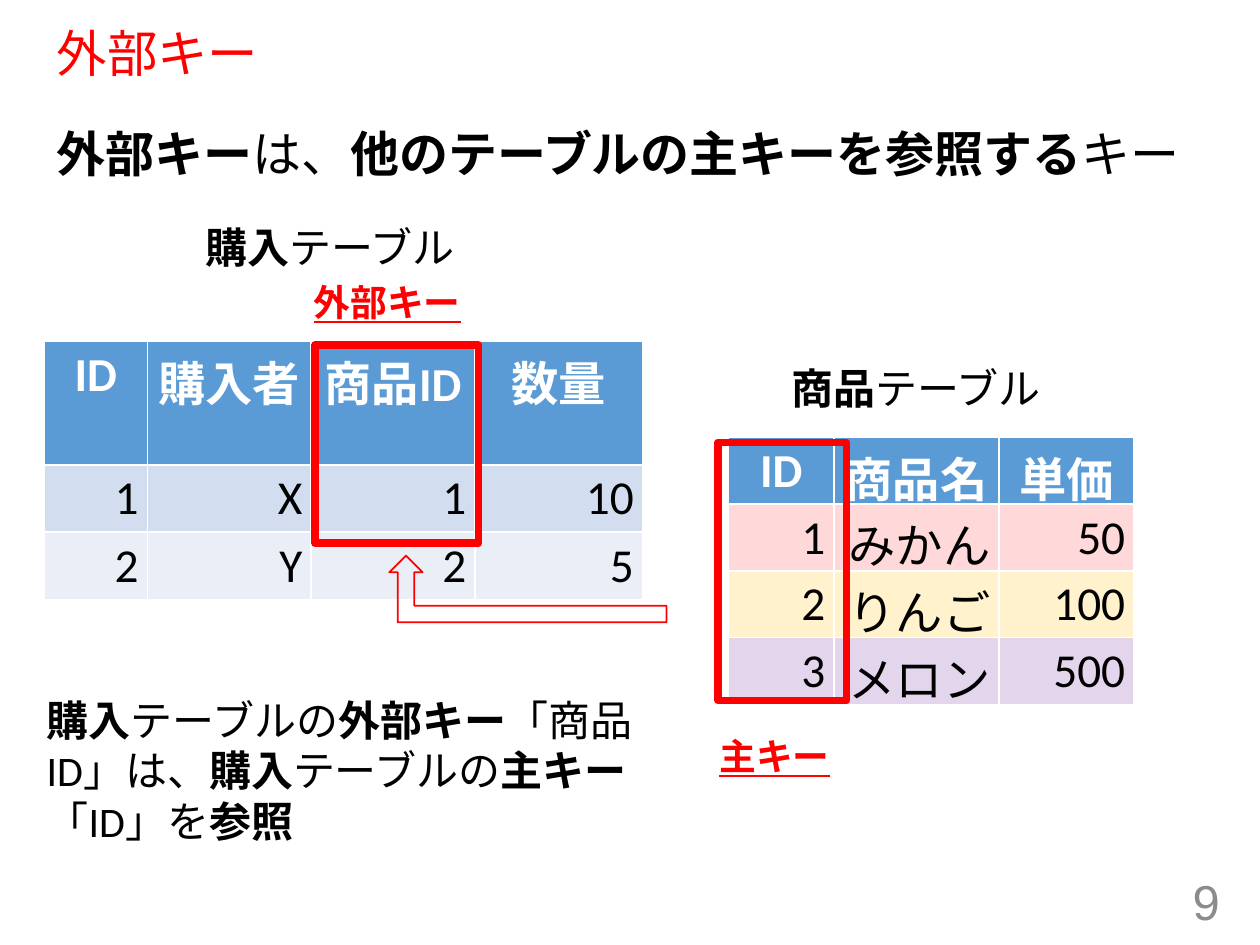
from lxml import etree
from pptx import Presentation, util as u
from pptx.dml.color import RGBColor
from pptx.enum import lang, shapes, text
from pptx.oxml.ns import qn

COLOURS = {
    "key": "FF0000", "ink": "000000", "page": "8C8C8C", "header": "5B9BD5",
    "header_ink": "FFFFFF", "band_dark": "D2DEEF", "band_light": "EAEFF7",
    "mikan": "FF0000", "ringo": "FFC000", "melon": "7030A0",
}
FORMATS = {
    "title": {"size": 28.8, "name": "Arial", "colour": "key"},
    "lead": {"size": 28, "name": "Arial", "colour": "ink"},
    "page": {"size": 28, "name": "Arial", "colour": "page"},
    "note": {"size": 24, "name": "Calibri", "colour": "ink", "east_asian": "Noto Sans CJK JP"},
    "key": {"size": 21, "name": "Calibri", "colour": "key", "underline": True},
    "header": {"size": 27, "name": "Calibri", "colour": "header_ink"},
    "cell": {"size": 27, "name": "Calibri", "colour": "ink"},
}
MARGINS = {"margin_left": 0.07, "margin_right": 0.07, "margin_top": 0.04, "margin_bottom": 0.04}
COLUMNS, ROWS = 10, 7.5

deck = Presentation()
deck.slide_width, deck.slide_height = u.Inches(10), u.Inches(7.5)
COL, ROW = deck.slide_width / COLUMNS, deck.slide_height / ROWS


def grid(box):
    """Turn left, top, width, height in grid columns and rows into lengths."""
    return [u.Emu(round(n * unit)) for n, unit in zip(box, (COL, ROW, COL, ROW))]


def beside(box, offset):
    """Move a part by the top left corner of its region."""
    left, top, width, height = offset
    return box[0] + left, box[1] + top, width, height


def rgb(name):
    return RGBColor.from_string(COLOURS[name])


def write(paragraph, words, style, align=None):
    """Write words in a named format; parts between asterisks are bold."""
    paragraph.alignment = align
    for index, part in enumerate(words.split("*")):
        if not part:
            continue
        run = paragraph.add_run()
        run.text = part
        font = run.font
        font.bold = index % 2 == 1
        font.language_id = lang.MSO_LANGUAGE_ID.JAPANESE
        for key, value in FORMATS[style].items():
            if key == "colour":
                font.color.rgb = rgb(value)
            elif key == "size":
                font.size = u.Pt(value)
            elif key != "east_asian":
                setattr(font, key, value)
        if "east_asian" in FORMATS[style]:
            east = etree.Element(qn("a:ea"), typeface=FORMATS[style]["east_asian"])
            font._element.find(qn("a:latin")).addnext(east)


def set_margins(holder):
    for side, inches in MARGINS.items():
        setattr(holder, side, u.Inches(inches))


def add_label(slide, box, words, style):
    frame = slide.shapes.add_textbox(*grid(box)).text_frame
    frame.word_wrap = True
    set_margins(frame)
    frame.paragraphs[0].space_before = u.Pt(10)
    write(frame.paragraphs[0], words, style)


def add_outline(slide, preset, box, width):
    shape = slide.shapes.add_shape(preset, *grid(box))
    shape.shadow.inherit = False
    shape.fill.background()
    shape.line.color.rgb = rgb("key")
    shape.line.width = u.Pt(width)
    return shape


def fill_cell(cell, colour, opacity):
    cell.fill.solid()
    cell.fill.fore_color.rgb = rgb(colour)
    if opacity < 100:
        tint = cell._tc.tcPr.find(f".//{qn('a:srgbClr')}")
        etree.SubElement(tint, qn("a:alpha"), val=str(opacity * 1000))


def add_records(slide, box, widths, records, fills):
    table = slide.shapes.add_table(len(records), len(widths), *grid(box)).table
    for column, width in zip(table.columns, widths):
        column.width = u.Emu(round(width * COL))
    for row, (record, fill) in enumerate(zip(records, fills)):
        for col, value in enumerate(record):
            cell = table.cell(row, col)
            set_margins(cell)
            fill_cell(cell, *fill)
            paragraph = cell.text_frame.paragraphs[0]
            if row == 0:
                write(paragraph, f"*{value}*", "header", text.PP_ALIGN.CENTER)
            else:
                write(paragraph, value, "cell", text.PP_ALIGN.RIGHT)


def add_keyed_table(slide, box, widths, records, fills, caption, key, frame):
    """Place a table with its caption, its key label and a frame round the key."""
    add_records(slide, box, widths, records, fills)
    add_outline(slide, shapes.MSO_SHAPE.RECTANGLE, beside(box, frame), 4.25)
    for (words, left, top), width, style in ((key, 2.68, "key"), (caption, 2.94, "note")):
        add_label(slide, beside(box, (left, top, width, 0.48)), words, style)


def place(placeholder, box, words, style):
    placeholder.left, placeholder.top, placeholder.width, placeholder.height = grid(box)
    placeholder.text_frame.auto_size = text.MSO_AUTO_SIZE.NONE
    paragraph = placeholder.text_frame.paragraphs[0]
    write(paragraph, words, style, text.PP_ALIGN.LEFT)
    return paragraph


def add_heading(slide, box):
    left, top, width, _ = box
    title = place(slide.shapes.title, (left, top, width, 0.51), "外部キー", "title")
    title.line_spacing = 0.9
    slide.shapes.title.text_frame.vertical_anchor = text.MSO_ANCHOR.MIDDLE
    lead = place(slide.placeholders[1], beside(box, (0, 0.74, width, 5.83)),
                 "*外部キー*は、*他のテーブルの主キーを参照する*キー", "lead")
    lead.space_before = u.Pt(10)
    properties = lead._p.get_or_add_pPr()
    properties.set("marL", "0")
    properties.set("indent", "0")
    etree.SubElement(properties, qn("a:buNone"))


def add_page_number(slide, box):
    frame = slide.shapes.add_textbox(*grid(box)).text_frame
    frame.word_wrap = True
    frame.vertical_anchor = text.MSO_ANCHOR.MIDDLE
    write(frame.paragraphs[0], "9", "page", text.PP_ALIGN.RIGHT)


def add_reference(slide, box):
    """Point from the primary key to the foreign key and explain the link."""
    arrow = add_outline(slide, shapes.MSO_SHAPE.BENT_UP_ARROW, beside(box, (2.79, 0, 2.2, 0.53)), 1)
    arrow._element.spPr.find(qn("a:xfrm")).set("flipH", "1")
    add_label(slide, beside(box, (0, 1.06, box[2], 1.88)),
              "*購入*テーブルの*外部キー*「商品ID」は、*購入*テーブルの*主キー*「ID」を*参照*", "note")


def main():
    slide = deck.slides.add_slide(deck.slide_layouts[1])
    header = ("header", 100)
    add_heading(slide, (0.35, 0.19, 9.25, 6.57))
    add_page_number(slide, (7.53, 6.95, 2.25, 0.4))
    add_keyed_table(
        slide, (5.78, 3.47, 3.22, 2.1), (0.84, 1.31, 1.07),
        [("ID", "商品名", "単価"), ("1", "みかん", "50"), ("2", "りんご", "100"), ("3", "メロン", "500")],
        [header, ("mikan", 15), ("ringo", 20), ("melon", 20)],
        caption=("*商品*テーブル", 0.43, -0.63), key=("*主キー*", -0.14, 2.31),
        frame=(-0.08, 0.04, 1.02, 2.05))
    add_keyed_table(
        slide, (0.35, 2.71, 4.75, 1.6), (0.82, 1.3, 1.3, 1.33),
        [("ID", "購入者", "商品ID", "数量"), ("1", "X", "1", "10"), ("2", "Y", "2", "5")],
        [header, ("band_dark", 100), ("band_light", 100)],
        caption=("*購入*テーブル", 1.21, -0.99), key=("*外部キー*", 2.07, -0.53),
        frame=(2.15, 0.03, 1.3, 1.57))
    add_reference(slide, (0.3, 4.41, 4.99, 2.94))
    deck.save("out.pptx")


if __name__ == "__main__":
    main()
